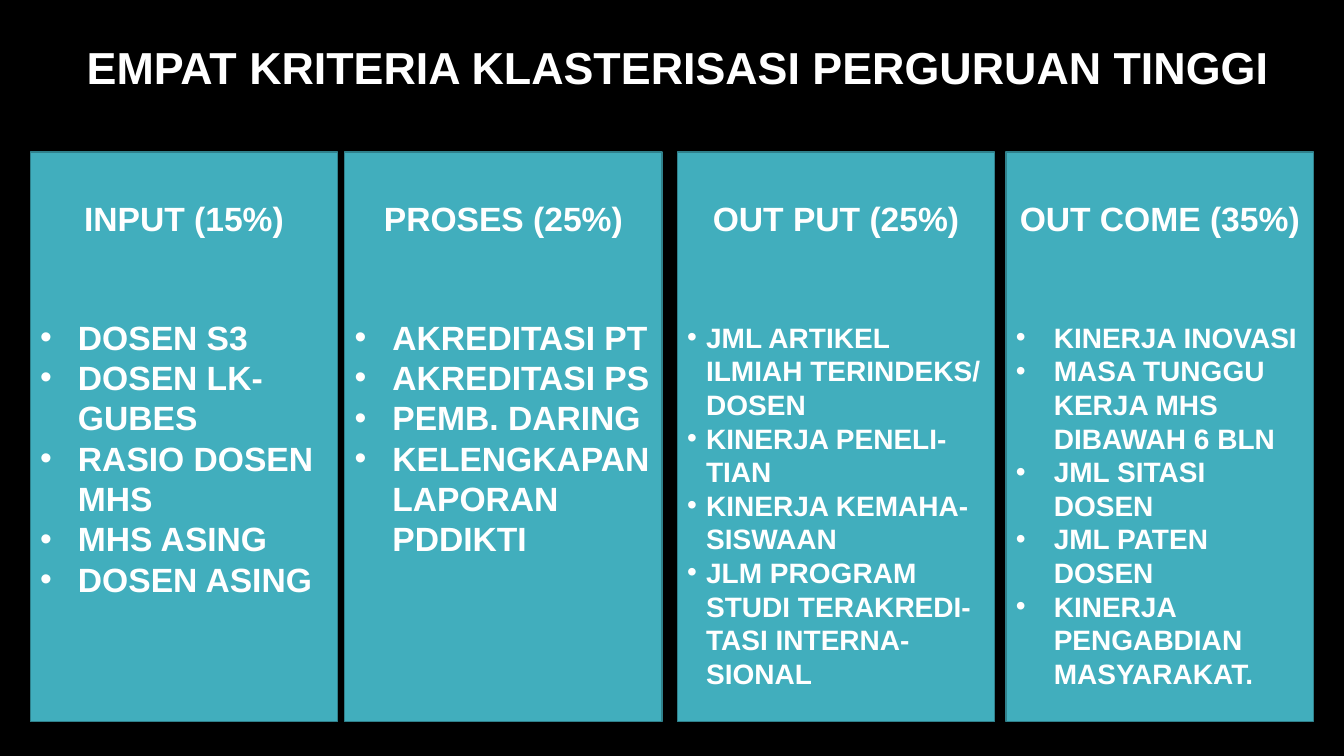
from pptx import Presentation
from pptx.dml.color import RGBColor
from pptx.enum.shapes import MSO_SHAPE
from pptx.enum.text import MSO_ANCHOR, MSO_AUTO_SIZE, PP_ALIGN
from pptx.oxml.xmlchemy import OxmlElement
from pptx.util import Pt

TITLE = "EMPAT KRITERIA KLASTERISASI PERGURUAN TINGGI"
CRITERIA = [
    {"head": "INPUT (15%)", "left": 21.6, "width": 219.6, "size": 24, "indent": 27,
     "items": ["DOSEN S3", "DOSEN LK-GUBES", "RASIO DOSEN MHS", "MHS ASING",
               "DOSEN ASING"]},
    {"head": "PROSES (25%)", "left": 246.2, "width": 226.8, "size": 24, "indent": 27,
     "items": ["AKREDITASI PT", "AKREDITASI PS", "PEMB. DARING",
               "KELENGKAPAN LAPORAN PDDIKTI"]},
    {"head": "OUT PUT (25%)", "left": 483.8, "width": 226.8, "size": 20, "indent": 13.5,
     "items": ["JML ARTIKEL ILMIAH TERINDEKS/ DOSEN", "KINERJA PENELI-TIAN",
               "KINERJA KEMAHA-SISWAAN",
               "JLM PROGRAM STUDI TERAKREDI-TASI INTERNA-SIONAL"]},
    {"head": "OUT COME (35%)", "left": 718.6, "width": 219.6, "size": 20, "indent": 27,
     "items": ["KINERJA INOVASI", "MASA TUNGGU KERJA MHS DIBAWAH 6 BLN",
               "JML SITASI DOSEN", "JML PATEN DOSEN",
               "KINERJA PENGABDIAN MASYARAKAT."]},
]
THEME = {
    "font": "Arial", "title": 32, "head": 24, "leading": 1.2,
    "back": RGBColor(0, 0, 0), "text": RGBColor(255, 255, 255),
    "panel": RGBColor(0x41, 0xAE, 0xBD), "edge": RGBColor(0x30, 0x81, 0x8C),
}
PANEL_TOP, PANEL_HEIGHT = 108.7, 406.8
HEAD_TOP, HEAD_HEIGHT = 138, 36
LIST_INSET = {24: 117.5, 20: 120}


def write(shape, lines, size, align=PP_ALIGN.LEFT, indent=0, top=3.6):
    """Fill a shape with formatted paragraphs, bulleted when indented."""
    tf = shape.text_frame
    tf.word_wrap = True
    tf.auto_size = MSO_AUTO_SIZE.NONE
    tf.vertical_anchor = MSO_ANCHOR.TOP
    tf.margin_left = tf.margin_right = Pt(7.2)
    tf.margin_top, tf.margin_bottom = Pt(top), Pt(3.6)
    for i, line in enumerate(lines):
        p = tf.paragraphs[0] if i == 0 else tf.add_paragraph()
        p.alignment = align
        p.space_before = p.space_after = Pt(0)
        p.line_spacing = Pt(size * THEME["leading"])
        if indent:
            pPr = p._p.get_or_add_pPr()
            pPr.set("marL", str(Pt(indent)))
            pPr.set("indent", str(-Pt(indent)))
            font = OxmlElement("a:buFont")
            font.set("typeface", THEME["font"])
            bullet = OxmlElement("a:buChar")
            bullet.set("char", "•")
            pPr.extend([font, bullet])
        r = p.add_run()
        r.text = line
        r.font.name, r.font.size, r.font.bold = THEME["font"], Pt(size), True
        r.font.color.rgb = THEME["text"]


def place(shape, left, top, width, height):
    """Set the position and size of a shape in points."""
    shape.left, shape.top = Pt(left), Pt(top)
    shape.width, shape.height = Pt(width), Pt(height)


def add_criterion(s, head, left, width, size, indent, items):
    """Draw one criterion panel with its list and heading."""
    panel = s.shapes.add_shape(MSO_SHAPE.RECTANGLE, Pt(left), Pt(PANEL_TOP),
                               Pt(width), Pt(PANEL_HEIGHT))
    panel.shadow.inherit = False
    panel.fill.solid()
    panel.fill.fore_color.rgb = THEME["panel"]
    panel.line.color.rgb = THEME["edge"]
    panel.line.width = Pt(1)
    write(panel, items, size, indent=indent, top=LIST_INSET[size])
    label = s.shapes.add_textbox(Pt(left), Pt(HEAD_TOP), Pt(width), Pt(HEAD_HEIGHT))
    write(label, [head], THEME["head"], align=PP_ALIGN.CENTER)


def main():
    """Build and save the slide."""
    prs = Presentation()
    prs.slide_width, prs.slide_height = Pt(960), Pt(540)
    s = prs.slides.add_slide(prs.slide_layouts[5])
    s.background.fill.solid()
    s.background.fill.fore_color.rgb = THEME["back"]
    title = s.shapes.title
    place(title, 54.7, 25, 867, 46)
    write(title, [TITLE], THEME["title"])
    for criterion in CRITERIA:
        add_criterion(s, **criterion)
    prs.save("out.pptx")


if __name__ == "__main__":
    main()
